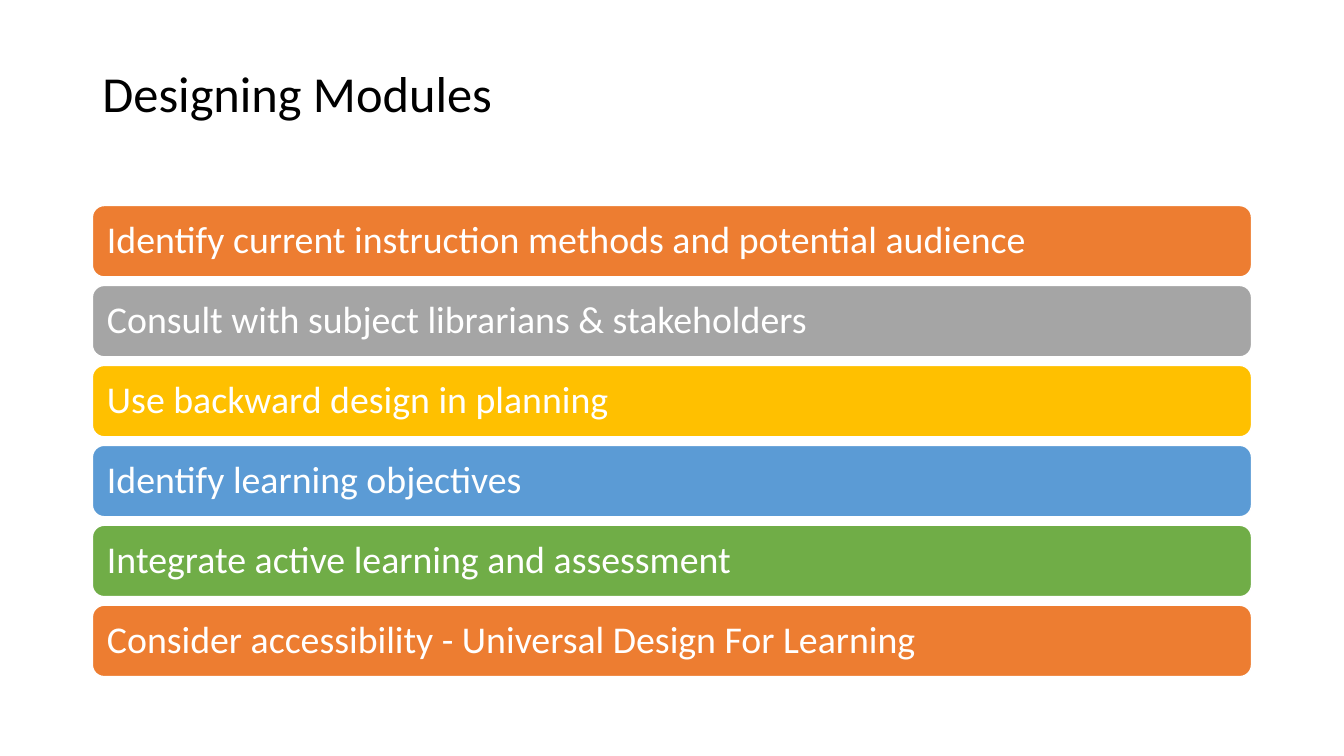
from dataclasses import dataclass
from typing import Any

from pptx import Presentation
from pptx.dml.color import RGBColor
from pptx.enum.shapes import MSO_SHAPE
from pptx.enum.text import MSO_ANCHOR, PP_ALIGN
from pptx.slide import Slide
from pptx.text.text import TextFrame
from pptx.util import Pt


@dataclass(frozen=True)
class Theme:
    font: str = "Calibri"
    head: float = 36
    body: float = 27
    black: str = "000000"
    white: str = "FFFFFF"
    orange: str = "ED7D31"
    gray: str = "A5A5A5"
    gold: str = "FFC000"
    blue: str = "5B9BD5"
    green: str = "70AD47"


@dataclass(frozen=True)
class Step:
    text: str
    fill: str


THEME = Theme()
LEFT, WIDTH = 66, 828
TOP, HEIGHT, PITCH = 146.8, 51, 57.1

STEPS = [
    Step("Identify current instruction methods and potential audience", THEME.orange),
    Step("Consult with subject librarians & stakeholders", THEME.gray),
    Step("Use backward design in planning", THEME.gold),
    Step("Identify learning objectives", THEME.blue),
    Step("Integrate active learning and assessment", THEME.green),
    Step("Consider accessibility - Universal Design For Learning", THEME.orange),
]


def apply(target: Any, values: dict[str, Any]) -> None:
    """Set each named attribute on the target."""
    for name, value in values.items():
        setattr(target, name, value)


def write(frame: TextFrame, text: str, size: float, color: str,
          insets: dict[str, Any]) -> None:
    frame.text = text
    apply(frame, {"word_wrap": True, "vertical_anchor": MSO_ANCHOR.MIDDLE, **insets})
    para = frame.paragraphs[0]
    apply(para, {"alignment": PP_ALIGN.LEFT, "line_spacing": 0.9})
    font = para.runs[0].font
    apply(font, {"name": THEME.font, "size": Pt(size)})
    font.color.rgb = RGBColor.from_string(color)


def add_title(slide: Slide, text: str) -> None:
    """Place the title, with a deep bottom inset that lifts its line."""
    title = slide.shapes.title
    apply(title, {"left": Pt(LEFT), "top": Pt(44), "width": Pt(WIDTH), "height": Pt(89)})
    write(title.text_frame, text, THEME.head, THEME.black, {"margin_bottom": Pt(43)})


def add_bar(slide: Slide, step: Step, top: float) -> None:
    bar = slide.shapes.add_shape(
        MSO_SHAPE.ROUNDED_RECTANGLE, Pt(LEFT), Pt(top), Pt(WIDTH), Pt(HEIGHT))
    bar.shadow.inherit = False
    bar.fill.solid()
    bar.fill.fore_color.rgb = RGBColor.from_string(step.fill)
    bar.line.color.rgb = RGBColor.from_string(THEME.white)
    bar.line.width = Pt(1)
    sides = ("left", "top", "right", "bottom")
    insets = {f"margin_{side}": Pt(8) for side in sides}
    write(bar.text_frame, step.text, THEME.body, THEME.white, insets)


def main() -> None:
    deck = Presentation()
    apply(deck, {"slide_width": Pt(960), "slide_height": Pt(540)})
    slide = deck.slides.add_slide(deck.slide_layouts.get_by_name("Title Only"))
    add_title(slide, "Designing Modules")
    for row, step in enumerate(STEPS):
        add_bar(slide, step, TOP + row * PITCH)
    deck.save("out.pptx")


if __name__ == "__main__":
    main()
